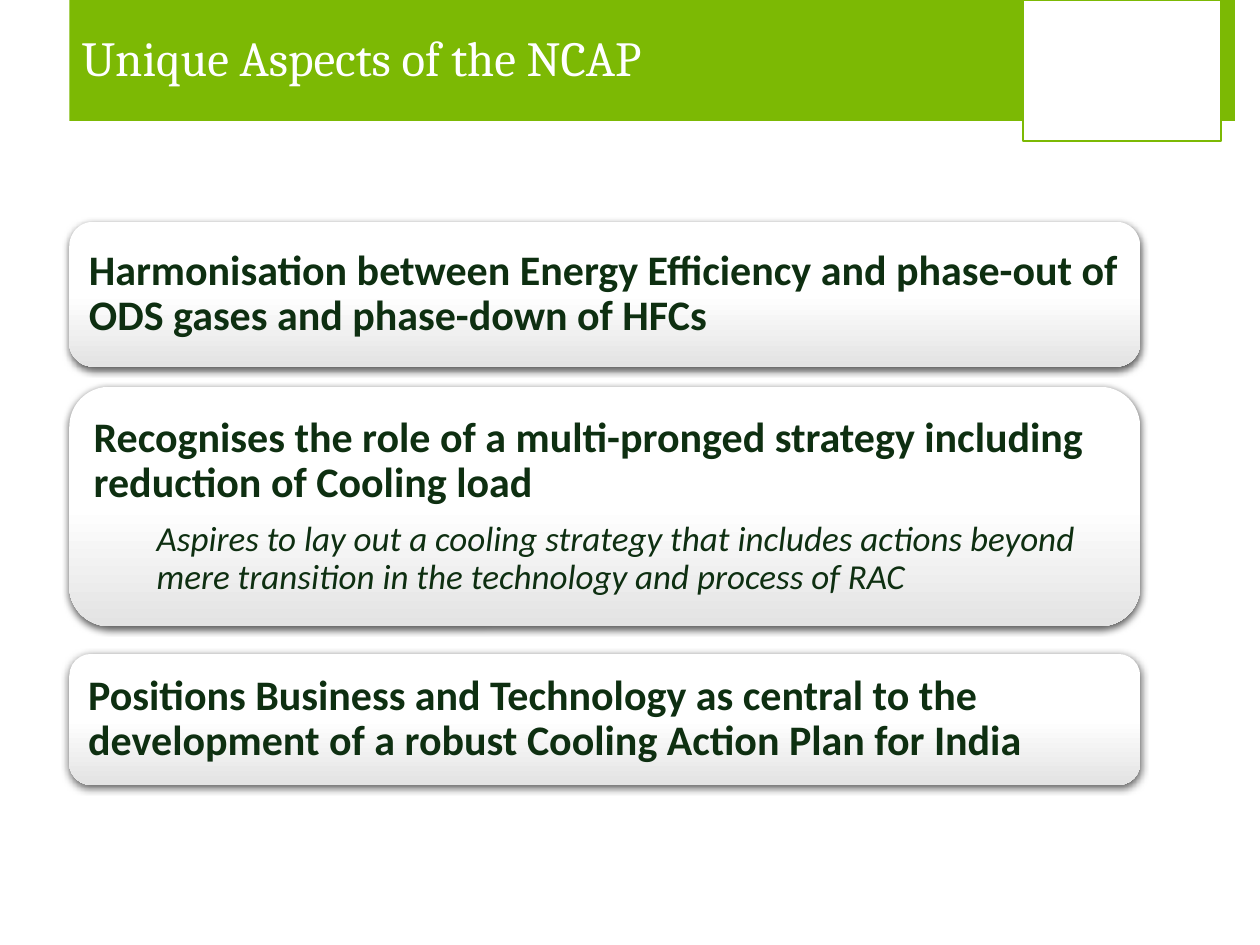
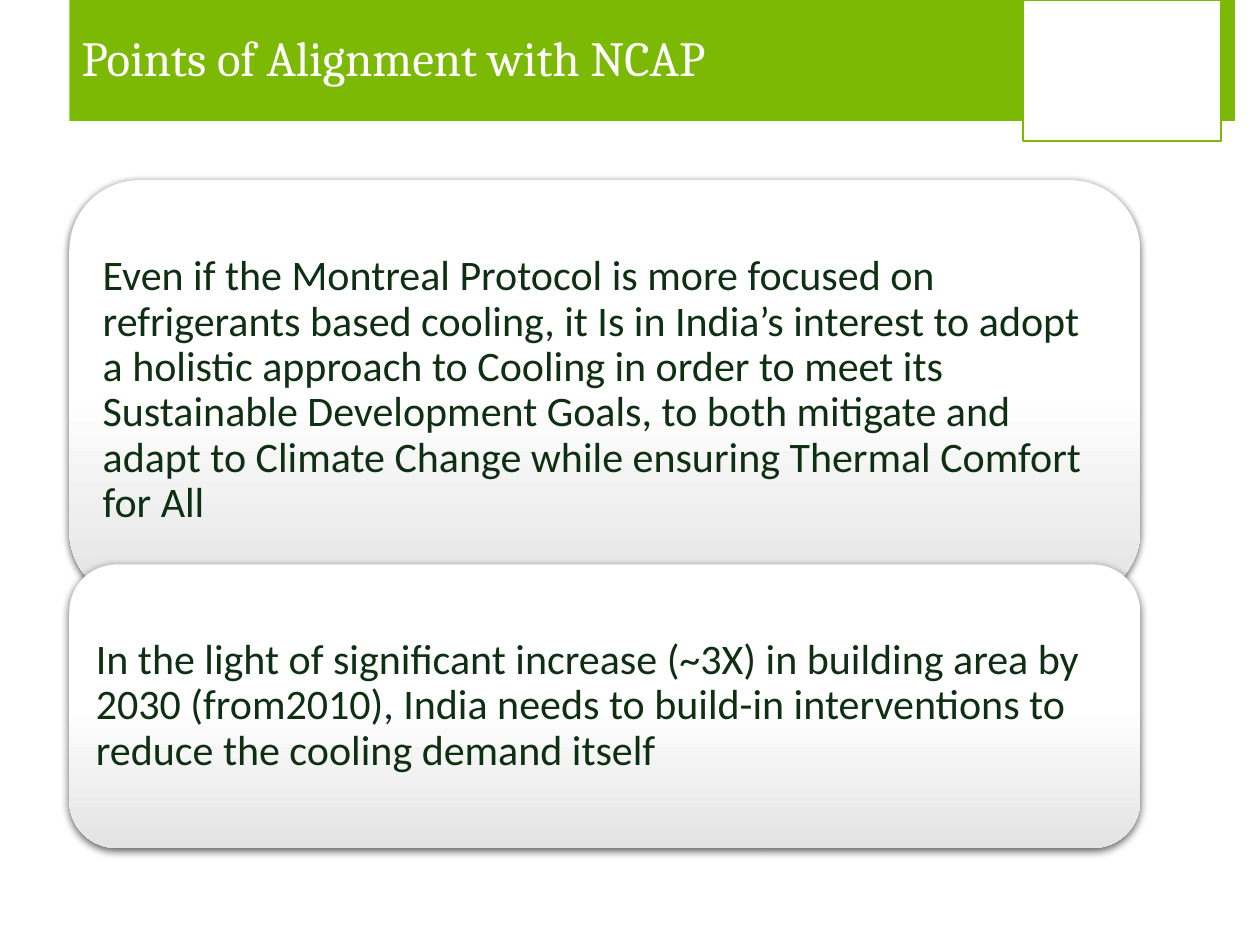
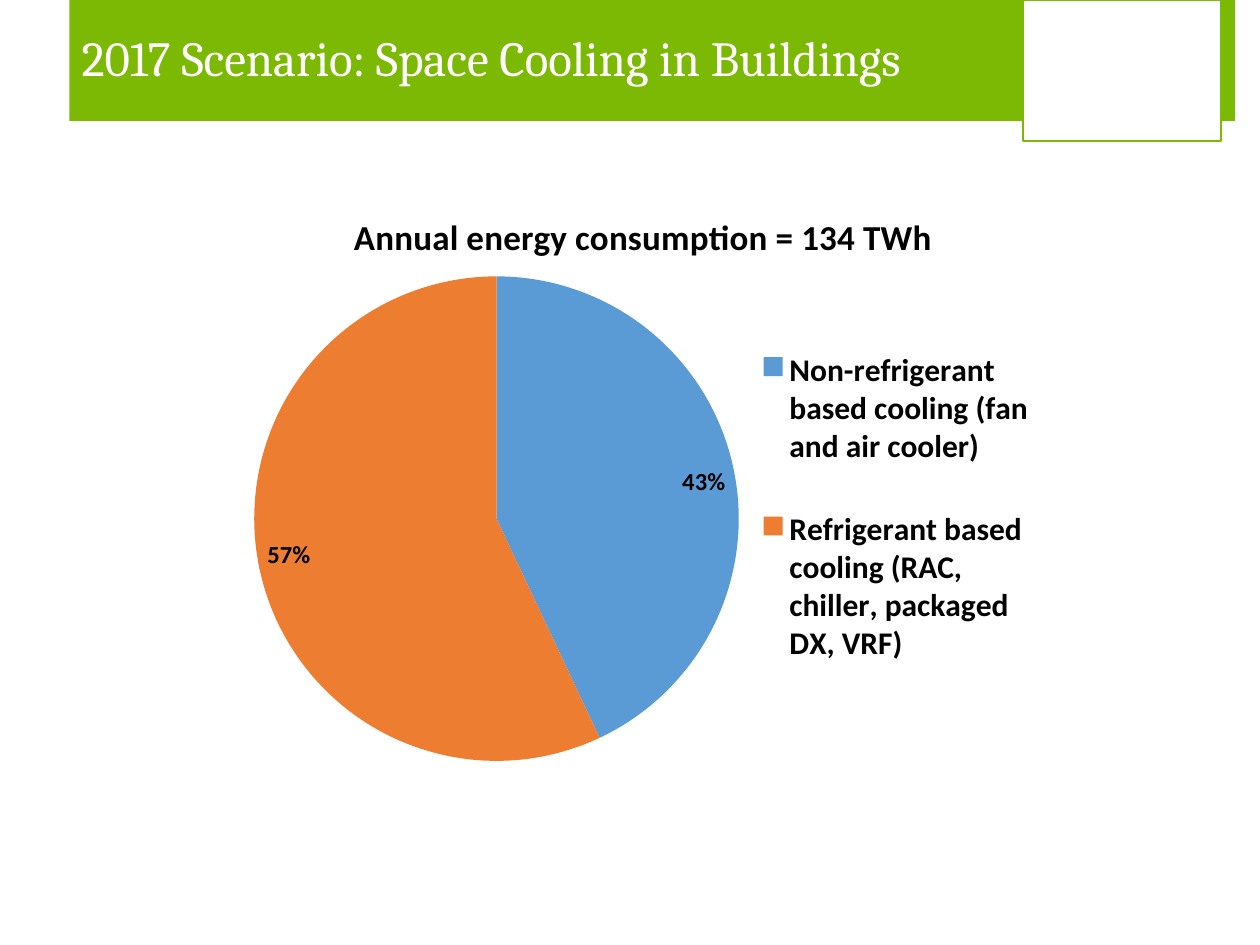
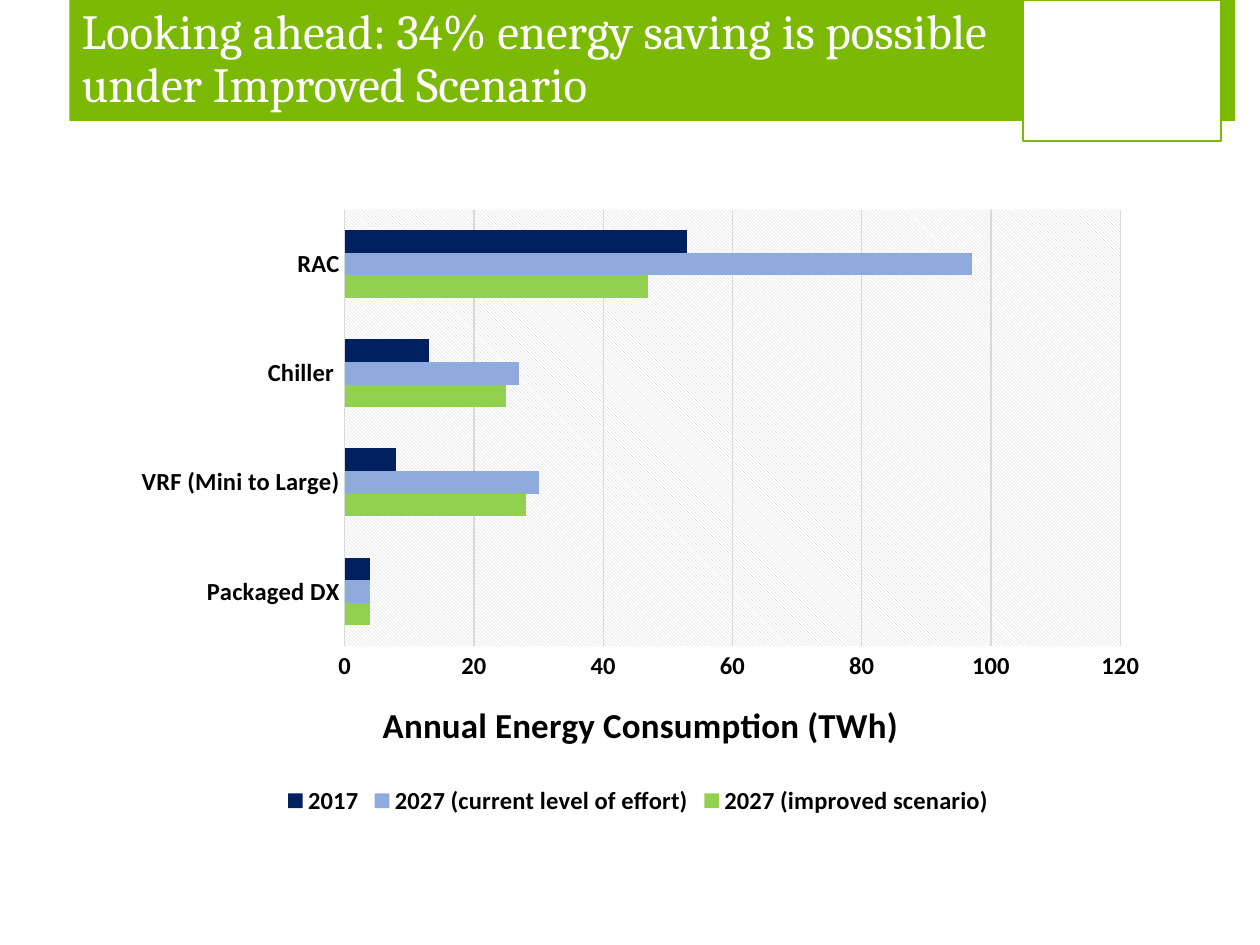
from copy import deepcopy

from lxml import etree
from pptx import Presentation
from pptx.chart.data import CategoryChartData
from pptx.dml.color import RGBColor
from pptx.enum.chart import XL_CHART_TYPE, XL_LABEL_POSITION, XL_LEGEND_POSITION, XL_TICK_MARK
from pptx.enum.shapes import MSO_SHAPE
from pptx.enum.text import MSO_ANCHOR
from pptx.oxml import parse_xml
from pptx.oxml.ns import nsdecls, qn
from pptx.util import Inches, Pt

RECTANGLE, ROUNDED = MSO_SHAPE.RECTANGLE, MSO_SHAPE.ROUNDED_RECTANGLE
MIDDLE = MSO_ANCHOR.MIDDLE
PIE, BARS = XL_CHART_TYPE.PIE, XL_CHART_TYPE.BAR_CLUSTERED
RIGHT, BOTTOM = XL_LEGEND_POSITION.RIGHT, XL_LEGEND_POSITION.BOTTOM
INSIDE_END, NO_TICK = XL_LABEL_POSITION.INSIDE_END, XL_TICK_MARK.NONE

# Grid: square cells, 100 columns by 75 rows
COLUMNS, ROWS = 100, 75
CELL = Inches(0.1)
CARD_LEFT, CARD_WIDTH = 5.5, 85
CORNER_INSET = 0.05  # share of a card's height taken up by its rounded corner

GREEN, WHITE, BLACK = "7CB904", "FFFFFF", "000000"
DARK_GREEN, CARD_GREY, LINE_GREY = "0E2F11", "E3E3E3", "D9D9D9"
BODY_FONT, TITLE_FONT = "Calibri", "Cambria"

STRONG = {"size": Pt(24), "bold": True}
PLAIN = {"size": Pt(24)}
DETAIL = {"size": Pt(20), "italic": True}

CARD_SHADOW = f"""<a:effectLst {nsdecls('a')}>
  <a:outerShdw blurRad="57150" dist="19050" dir="5400000" algn="ctr" rotWithShape="0">
    <a:srgbClr val="{BLACK}"><a:alpha val="63000"/></a:srgbClr>
  </a:outerShdw></a:effectLst>"""

PLOT_PATTERN = f"""<c:spPr {nsdecls('c', 'a')}><a:pattFill prst="ltDnDiag">
  <a:fgClr><a:srgbClr val="D0CECE"/></a:fgClr><a:bgClr><a:srgbClr val="{WHITE}"/></a:bgClr>
  </a:pattFill></c:spPr>"""

CHART_BORDER = f"""<c:spPr {nsdecls('c', 'a')}><a:noFill/><a:ln w="9525">
  <a:solidFill><a:srgbClr val="{WHITE}"/></a:solidFill></a:ln></c:spPr>"""


def color(value):
    return RGBColor.from_string(value)


def apply(target, **values):
    for name, value in values.items():
        setattr(target, name, value)


def style_font(font, font_color=BLACK, **values):
    apply(font, **{"name": BODY_FONT, **values})
    font.color.rgb = color(font_color)


def paint(fill, value):
    fill.solid()
    fill.fore_color.rgb = color(value)


def draw_line(line, value, width):
    paint(line.fill, value)
    line.width = Pt(width)


def place(parent, index, left, top, width, height):
    """Set a chart part's manual layout, in shares of the chart."""
    for old in parent.findall(qn("c:layout")):
        parent.remove(old)
    layout = parse_xml(f"<c:layout {nsdecls('c')}/>")
    manual = etree.SubElement(layout, qn("c:manualLayout"))
    settings = {"xMode": "edge", "yMode": "edge", "x": left, "y": top, "w": width, "h": height}
    if parent.tag == qn("c:plotArea"):
        settings = {"layoutTarget": "inner", **settings}
    for name, value in settings.items():
        etree.SubElement(manual, qn(f"c:{name}")).set("val", str(value))
    parent.insert(index, layout)


class Deck:
    def __init__(self):
        self.presentation = Presentation()
        apply(self.presentation, slide_width=COLUMNS * CELL, slide_height=ROWS * CELL)
        self.slide = None

    def cells(self, *lengths):
        return [round(length * CELL) for length in lengths]

    def shape(self, kind, *box):
        shape = self.slide.shapes.add_shape(kind, *self.cells(*box))
        shape.shadow.inherit = False
        shape.line.fill.background()
        return shape

    def text(self, box, items, margin=None, **base):
        """Write paragraphs given as (text, font values, paragraph values)."""
        frame = self.slide.shapes.add_textbox(*self.cells(*box)).text_frame
        apply(frame, word_wrap=True, vertical_anchor=MIDDLE)
        if margin is not None:
            for side in ("left", "top", "right", "bottom"):
                setattr(frame, f"margin_{side}", margin)
        for index, (words, font, spacing) in enumerate(items):
            paragraph = frame.paragraphs[0] if index == 0 else frame.add_paragraph()
            apply(paragraph, line_spacing=0.9, **spacing)
            run = paragraph.add_run()
            run.text = words
            style_font(run.font, **{**base, **font})
            if spacing.get("level"):
                paragraph._p.get_or_add_pPr().set("marL", str(Inches(0.5)))

    def new_slide(self, title):
        self.slide = self.presentation.slides.add_slide(self.presentation.slide_layouts[6])
        # Title band and the empty box at its right
        paint(self.shape(RECTANGLE, 5.5, 0, 92.5, 9.6).fill, GREEN)
        box = self.shape(RECTANGLE, 81.2, 0, 15.7, 11.2)
        paint(box.fill, WHITE)
        draw_line(box.line, GREEN, 1.5)
        self.text((5.5, 0, 75.7, 9.6), [(title, {"size": Pt(28)}, {})],
                  name=TITLE_FONT, font_color=WHITE)

    def card(self, top, height, *items):
        card = self.shape(ROUNDED, CARD_LEFT, top, CARD_WIDTH, height)
        card.fill.gradient()
        card.fill.gradient_angle = 270
        first, last = card.fill.gradient_stops
        first.color.rgb, last.color.rgb = color(WHITE), color(CARD_GREY)
        properties = card._element.spPr
        stops = properties.find(".//" + qn("a:gsLst"))
        middle = deepcopy(stops[0])
        middle.set("pos", "50000")
        stops.insert(1, middle)
        properties.replace(properties.find(qn("a:effectLst")), parse_xml(CARD_SHADOW))

        inset = height * CORNER_INSET
        box = (CARD_LEFT + inset, top + inset, CARD_WIDTH - 2 * inset, height - 2 * inset)
        self.text(box, items, margin=CELL, font_color=DARK_GREEN)

    def chart(self, kind, box, categories, series, plot_box, legend):
        data = CategoryChartData()
        data.categories = categories
        for name, values in series:
            data.add_series(name, values)
        chart = self.slide.shapes.add_chart(kind, *self.cells(*box), data).chart
        style_font(chart.font, size=Pt(10))
        apply(chart, has_title=False, has_legend=True)
        position, size = legend
        apply(chart.legend, position=position, include_in_layout=False)
        style_font(chart.legend.font, size=Pt(size), bold=True)
        place(chart.element.find(".//" + qn("c:plotArea")), 0, *plot_box)
        return chart

    def heading(self, owner, words):
        """Title a chart or an axis."""
        title = owner.chart_title if hasattr(owner, "chart_title") else owner.axis_title
        title.text_frame.text = words
        style_font(title.text_frame.paragraphs[0].runs[0].font, size=Pt(20), bold=True)

    def pie(self, title, box, values, colors, plot_box, legend_box):
        chart = self.chart(PIE, box, list(values), [("Series 1", list(values.values()))],
                           plot_box, (RIGHT, 18))
        self.heading(chart, title)
        place(chart.element.find(".//" + qn("c:legend")), 1, *legend_box)
        plot = chart.plots[0]
        apply(plot, vary_by_categories=True, has_data_labels=True)
        apply(plot.data_labels, show_percentage=True, show_value=False, number_format="0%",
              number_format_is_linked=False, position=INSIDE_END)
        style_font(plot.data_labels.font, size=Pt(14), bold=True)
        for index, value in enumerate(colors):
            paint(plot.series[0].points[index].format.fill, value)

    def bars(self, axis_title, box, categories, series, plot_box):
        chart = self.chart(BARS, box, categories, [(name, values) for name, values, _ in series],
                           plot_box, (BOTTOM, 14))
        plot = chart.plots[0]
        apply(plot, gap_width=182, vary_by_categories=False)
        for bar, (_, _, value) in zip(plot.series, series):
            paint(bar.format.fill, value)

        # Axes
        for axis in (chart.category_axis, chart.value_axis):
            apply(axis, major_tick_mark=NO_TICK, minor_tick_mark=NO_TICK)
            style_font(axis.tick_labels.font, size=Pt(14), bold=True)
        draw_line(chart.category_axis.format.line, LINE_GREY, 0.75)
        scale = chart.value_axis
        apply(scale, minimum_scale=0, maximum_scale=120, major_unit=20, has_major_gridlines=True)
        apply(scale.tick_labels, number_format="0", number_format_is_linked=False)
        draw_line(scale.major_gridlines.format.line, LINE_GREY, 0.75)
        scale.format.line.fill.background()
        self.heading(scale, axis_title)

        # Hatched plot area and chart border
        chart.element.find(".//" + qn("c:plotArea")).append(parse_xml(PLOT_PATTERN))
        chart.element.find(qn("c:chart")).addnext(parse_xml(CHART_BORDER))


def main():
    deck = Deck()

    deck.new_slide("Unique Aspects of the NCAP")
    deck.card(17.6, 11.5, ("Harmonisation between Energy Efficiency and phase-out of ODS gases "
                           "and phase-down of HFCs", STRONG, {}))
    deck.card(30.7, 19,
              ("Recognises the role of a multi-pronged strategy including reduction of "
               "Cooling load", STRONG, {"space_after": Pt(8.4)}),
              ("Aspires to lay out a cooling strategy that includes actions beyond mere "
               "transition in the technology and process of RAC", DETAIL,
               {"level": 1, "space_after": Pt(6)}))
    deck.card(51.9, 10.4, ("Positions Business and Technology as central to the development of "
                           "a robust Cooling Action Plan for India", STRONG, {}))

    deck.new_slide("Points of Alignment with NCAP")
    deck.card(14.3, 33.4, (
        "Even if the Montreal Protocol is more focused on refrigerants based cooling, it Is in "
        "India’s interest to adopt a holistic approach to Cooling in order to meet its "
        "Sustainable Development Goals, to both mitigate and adapt to Climate Change while "
        "ensuring Thermal Comfort for All", PLAIN, {}))
    deck.card(44.8, 22.5, (
        "In the light of significant increase (~3X) in building area by 2030 (from2010), India "
        "needs to build-in interventions to reduce the cooling demand itself", PLAIN,
        {"space_after": Pt(6)}))

    deck.new_slide("2017 Scenario: Space Cooling in Buildings")
    deck.pie("Annual energy consumption = 134 TWh", (18.7, 14.9, 64.7, 46.9),
             {"Non-refrigerant based cooling (fan and air cooler)": 43,
              "Refrigerant based cooling (RAC, chiller, packaged DX, VRF)": 57},
             ("5B9BD5", "ED7D31"),
             plot_box=(0.02, 0.15, 0.6, 0.82), legend_box=(0.64, 0.2, 0.34, 0.68))

    deck.new_slide("Looking ahead: 34% energy saving is possible under Improved Scenario")
    deck.bars("Annual Energy Consumption (TWh)", (9, 15.6, 83.3, 49.6),
              ["Packaged DX", "VRF (Mini to Large)", "Chiller ", "RAC"],
              [("2027 (improved scenario)", (4, 28, 25, 47), "92D050"),
               ("2027 (current level of effort)", (4, 30, 27, 97), "8FAADC"),
               ("2017", (4, 8, 13, 53), "002060")],
              plot_box=(0.22, 0.02, 0.74, 0.7))

    deck.presentation.save("out.pptx")


if __name__ == "__main__":
    main()
